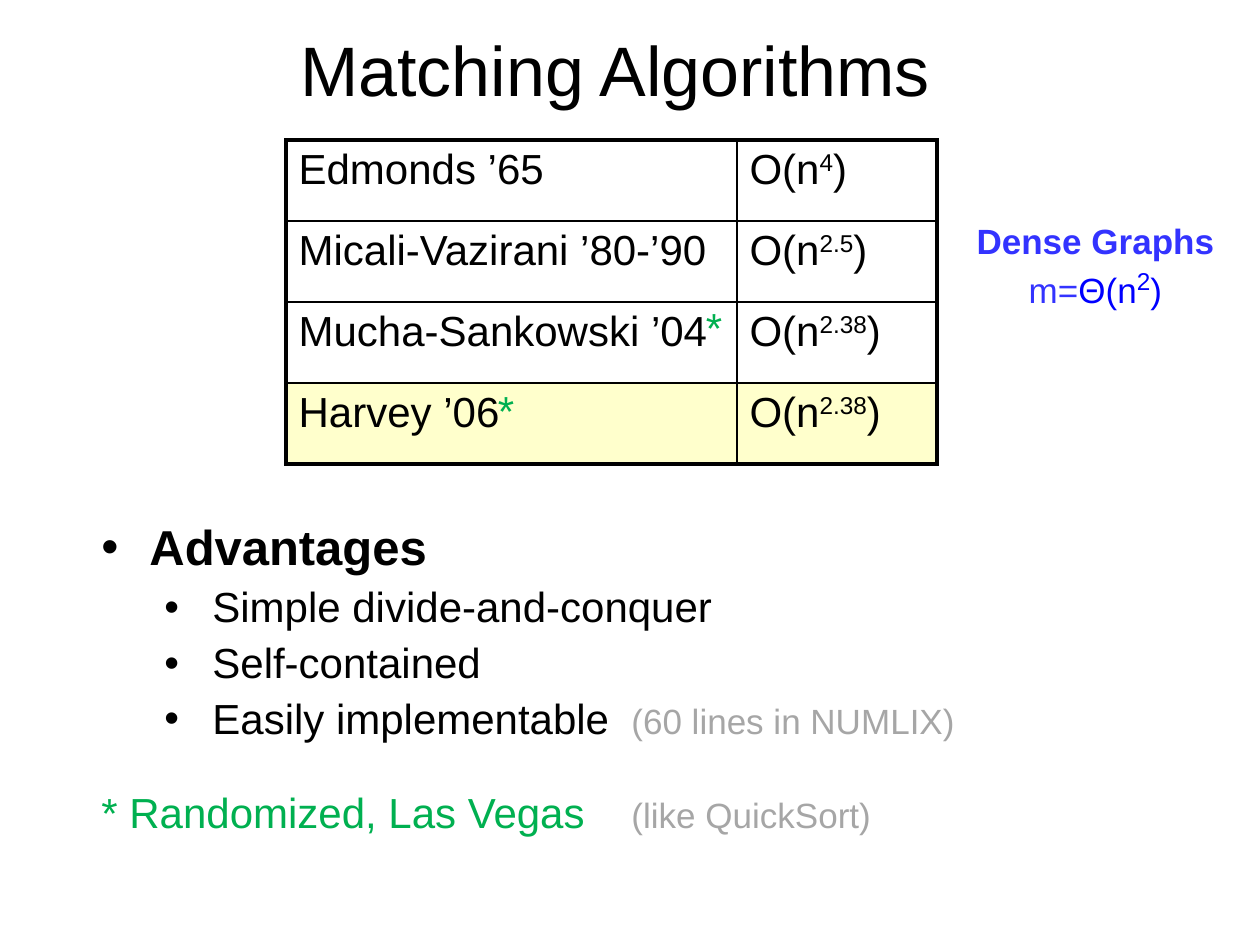
import pptx
import pptx.util
import pptx.dml.color
import pptx.enum.text
import pptx.oxml
import lxml.etree
from dataclasses import dataclass

PX = 914400 // 126
ALIGN = pptx.enum.text.PP_ALIGN
ANCHOR = pptx.enum.text.MSO_ANCHOR


@dataclass(frozen=True)
class Theme:
    font: str = "Arial"
    ink: str = "000000"
    green: str = "00B050"
    gray: str = "A6A6A6"
    indigo: str = "3333FF"
    blue: str = "0000FF"
    cream: str = "FFFFCC"
    title: int = 40
    head: int = 28
    body: int = 24
    note: int = 20
    thick: float = 2.25
    thin: float = 1


T = Theme()

TITLE = "Matching Algorithms"
BOUNDS = [
    ("Edmonds ’65", "4"),
    ("Micali-Vazirani ’80-’90", "2.5"),
    ("Mucha-Sankowski ’04", "2.38"),
    ("Harvey ’06", "2.38"),
]
COLS, ROW = (451, 200), 81
GRID = (286, 140)
STARS = [(693, 295), (485, 378)]
# Level, text, side note
POINTS = [
    (0, "Advantages", ""),
    (1, "Simple divide-and-conquer", ""),
    (1, "Self-contained", ""),
    (1, "Easily implementable", "(60 lines in NUMLIX)"),
]
FOOT = ("* Randomized, Las Vegas", "(like QuickSort)")
NOTE_TAB = 530
HANG = 48
STEP = 63


def px(n):
    return pptx.util.Emu(n * PX)


def style(font, size, color=T.ink, bold=False):
    font.name, font.size, font.bold = T.font, pptx.util.Pt(size), bold
    font.color.rgb = pptx.dml.color.RGBColor.from_string(color)


def add_run(para, text, size=None, color=None, raised=False):
    run = para.add_run()
    run.text = text
    if size:
        run.font.size = pptx.util.Pt(size)
    if color:
        run.font.color.rgb = pptx.dml.color.RGBColor.from_string(color)
    if raised:
        run._r.get_or_add_rPr().set("baseline", "30000")


def add_child(parent, tag, **attrs):
    node = lxml.etree.SubElement(parent, pptx.oxml.ns.qn(tag))
    for key, val in attrs.items():
        node.set(key, str(val))
    return node


def add_note(para, text):
    """Put a gray side note at the shared tab stop."""
    tabs = add_child(para._p.get_or_add_pPr(), "a:tabLst")
    add_child(tabs, "a:tab", pos=px(NOTE_TAB), algn="l")
    add_run(para, "\t" + text, T.note, T.gray)


def add_box(slide, x, y, w, h, wrap=True, anchor=ANCHOR.TOP):
    frame = slide.shapes.add_textbox(px(x), px(y), px(w), px(h)).text_frame
    frame.word_wrap, frame.vertical_anchor = wrap, anchor
    return frame


def add_line(slide, box, text, size, color=T.ink, align=ALIGN.CENTER, **opts):
    para = add_box(slide, *box, **opts).paragraphs[0]
    para.alignment = align
    style(para.font, size, color)
    add_run(para, text)
    return para


def set_edges(cell, row, col):
    """Draw thick lines on the rim of the table and thin ones inside."""
    rim = {"L": col == 0, "R": col == len(COLS) - 1,
           "T": row == 0, "B": row == len(BOUNDS) - 1}
    props = cell._tc.get_or_add_tcPr()
    for spot, (side, outer) in enumerate(rim.items()):
        width = pptx.util.Pt(T.thick if outer else T.thin)
        edge = add_child(props, "a:ln" + side, w=width)
        add_child(add_child(edge, "a:solidFill"), "a:srgbClr", val=T.ink)
        props.insert(spot, edge)


def add_grid(slide):
    table = slide.shapes.add_table(
        len(BOUNDS), len(COLS), px(GRID[0]), px(GRID[1]),
        px(sum(COLS)), px(ROW * len(BOUNDS))).table
    table.first_row = table.horz_banding = False
    for col, width in zip(table.columns, COLS):
        col.width = px(width)
    for i, (name, power) in enumerate(BOUNDS):
        table.rows[i].height = px(ROW)
        for j in range(len(COLS)):
            cell = table.cell(i, j)
            if i == len(BOUNDS) - 1:
                cell.fill.solid()
                cell.fill.fore_color.rgb = (
                    pptx.dml.color.RGBColor.from_string(T.cream))
            else:
                cell.fill.background()
            para = cell.text_frame.paragraphs[0]
            style(para.font, T.body)
            if j == 0:
                add_run(para, name)
            else:
                add_run(para, "O(n")
                add_run(para, power, raised=True)
                add_run(para, ")")
            set_edges(cell, i, j)


def add_dense(slide):
    frame = add_box(slide, 963, 213, 265, 97, wrap=False)
    head, rule = frame.paragraphs[0], frame.add_paragraph()
    for para in (head, rule):
        para.alignment = ALIGN.CENTER
        style(para.font, T.note, T.indigo, bold=para is head)
    add_run(head, "Dense Graphs")
    add_run(rule, "m=")
    add_run(rule, "Θ(n", color=T.blue)
    add_run(rule, "2", T.body, T.blue, raised=True)
    add_run(rule, ")", color=T.blue)


def add_points(slide):
    frame = add_box(slide, 89, 517, 1027, 227)
    for i, (level, text, note) in enumerate(POINTS):
        para = frame.add_paragraph() if i else frame.paragraphs[0]
        para.level, para.line_spacing = level, 0.9
        if i:
            para.space_before = pptx.util.Pt(6)
        props = para._p.get_or_add_pPr()
        props.set("marL", str(px(HANG + STEP * level)))
        props.set("indent", str(px(-HANG)))
        add_child(props, "a:buFont", typeface=T.font)
        add_child(props, "a:buChar", char="•")
        add_run(para, text)
        if note:
            add_note(para, note)
        style(para.font, T.body if level else T.head, bold=level == 0)


def main():
    deck = pptx.Presentation()
    deck.slide_width, deck.slide_height = px(1260), px(945)
    slide = deck.slides.add_slide(deck.slide_layouts[6])
    add_grid(slide)
    for x, y in STARS:
        add_line(slide, (x, y, 42, 63), "*", T.body, T.green, wrap=False)
    foot = add_line(slide, (89, 756, 878, 87), FOOT[0], T.body, T.green,
                    ALIGN.LEFT, anchor=ANCHOR.BOTTOM)
    add_note(foot, FOOT[1])
    add_dense(slide)
    add_points(slide)
    add_line(slide, (48, 23, 1134, 91), TITLE, T.title, anchor=ANCHOR.MIDDLE)
    deck.save("out.pptx")


if __name__ == "__main__":
    main()
